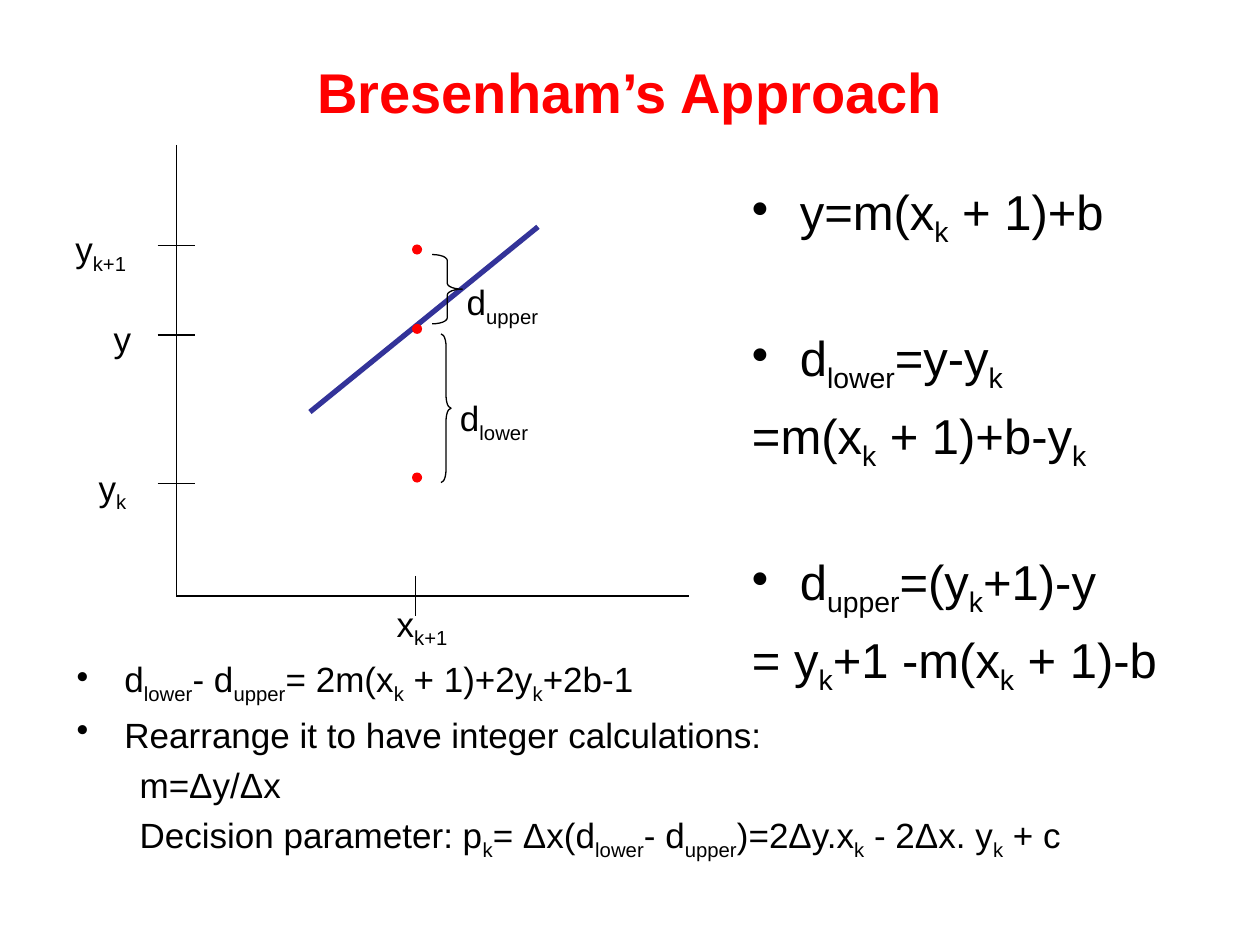
from lxml import etree
from pptx import Presentation
from pptx.dml.color import RGBColor
from pptx.enum.shapes import MSO_CONNECTOR, MSO_SHAPE
from pptx.enum.text import MSO_ANCHOR as ANCHOR, PP_ALIGN as ALIGN
from pptx.oxml.ns import qn
from pptx.util import Inches, Pt

BLACK, RED, BLUE = "000000", "FF0000", "333399"
rgb = RGBColor.from_string

prs = Presentation()
prs.slide_width, prs.slide_height = Inches(10), Inches(7.5)
s = prs.slides.add_slide(prs.slide_layouts[6])


def add_text(box, paragraphs, size=20, color=BLACK, bold=False,
             align=ALIGN.LEFT, anchor=ANCHOR.TOP):
    """Each paragraph is (text, bullet, margin, indent, space before).
    Text between a pair of ~ is subscript."""
    tf = s.shapes.add_textbox(*map(Inches, box)).text_frame
    tf.word_wrap = True
    tf.vertical_anchor = anchor
    for i, (text, bullet, margin, indent, before) in enumerate(paragraphs):
        p = tf.add_paragraph() if i else tf.paragraphs[0]
        p.alignment = align
        p.space_before = Pt(before)
        pPr = p._p.get_or_add_pPr()
        pPr.set("marL", str(Inches(margin)))
        pPr.set("indent", str(Inches(indent)))
        if bullet:
            etree.SubElement(pPr, qn("a:buChar"), char="•")
        else:
            etree.SubElement(pPr, qn("a:buNone"))
        for j, part in enumerate(text.split("~")):
            if not part:
                continue
            r = p.add_run()
            r.text = part
            r.font.name, r.font.size, r.font.bold = "Arial", Pt(size), bold
            r.font.color.rgb = rgb(color)
            if j % 2:
                r._r.get_or_add_rPr().set("baseline", "-25000")


def add_line(x1, y1, x2, y2, color=BLACK, width=0.75):
    c = s.shapes.add_connector(MSO_CONNECTOR.STRAIGHT,
                               *map(Inches, (x1, y1, x2, y2)))
    c.line.color.rgb = rgb(color)
    c.line.width = Pt(width)
    etree.SubElement(c._element.spPr, qn("a:effectLst"))


# Title
add_text((0.5, 0.3, 9, 0.85), [("Bresenham’s Approach", False, 0, 0, 0)],
         size=32, color=RED, bold=True, align=ALIGN.CENTER,
         anchor=ANCHOR.MIDDLE)

# Equations on the right; a wide gap opens each new group
NEAR, GAP = 6.5, 45
equations = [
    ("y=m(x~k~ + 1)+b", True, NEAR),
    ("d~lower~=y-y~k~", True, GAP),
    ("=m(x~k~ + 1)+b-y~k~", False, NEAR),
    ("d~upper~=(y~k~+1)-y", True, GAP),
    ("= y~k~+1 -m(x~k~ + 1)-b", False, NEAR),
]
add_text((5.87, 1.39, 3.63, 4.25),
         [(t, b, 0.38, -0.38, before) for t, b, before in equations], size=28)

# Axes, the ideal line and the ticks
X0, Y0, XK = 1.4, 4.73, 3.3
add_line(X0, 1.15, X0, Y0)
add_line(X0, Y0, 5.47, Y0)
add_line(2.46, 3.27, 4.27, 1.8, BLUE, 3)
for y in (1.95, 2.66, 3.84):
    add_line(X0 - 0.15, y, X0 + 0.15, y)
add_line(XK, Y0 - 0.16, XK, Y0 + 0.16)

# Sample points
DOT = 0.08
for top in (1.94, 2.57, 3.75):
    sp = s.shapes.add_shape(MSO_SHAPE.OVAL, Inches(3.27), Inches(top),
                            Inches(DOT), Inches(DOT))
    sp.shadow.inherit = False
    sp.fill.solid()
    sp.fill.fore_color.rgb = rgb(RED)
    sp.line.fill.background()

# Braces marking the two distances
for box, curve in (((3.43, 2.02, 0.24, 0.55), 0.195),
                   ((3.5, 2.65, 0.08, 1.18), 1.259)):
    sp = s.shapes.add_shape(MSO_SHAPE.RIGHT_BRACE, *map(Inches, box))
    sp.shadow.inherit = False
    sp.adjustments[0] = curve
    sp.adjustments[1] = 0.5
    sp.fill.background()
    sp.line.color.rgb = rgb(BLACK)
    sp.line.width = Pt(0.75)

# Diagram labels
for text, left, top, width in (
    ("y~k+1~", 0.2, 1.76, 0.9),
    ("y", 0.24, 2.47, 0.9),
    ("y~k~", 0.2, 3.65, 0.9),
    ("x~k+1~", 1.69, 4.73, 1.96),
    ("d~upper~", 3.03, 2.18, 1.34),
    ("d~lower~", 2.95, 3.1, 1.34),
):
    add_text((left, top, width, 0.43), [(text, False, 0, 0, 0)],
             align=ALIGN.RIGHT)

# Decision parameter
add_text((0.51, 5.17, 8.74, 2.13), [
    ("d~lower~- d~upper~= 2m(x~k~ + 1)+2y~k~+2b-1", True, 0.38, -0.38, 4.6),
    ("Rearrange it to have integer calculations:", True, 0.38, -0.38, 4.6),
    ("m=Δy/Δx", False, 0.81, -0.31, 4.6),
    ("Decision parameter: p~k~= Δx(d~lower~- d~upper~)=2Δy.x~k~ - 2Δx. y~k~ + c",
     False, 0.81, -0.31, 4.6),
])

prs.save("out.pptx")
